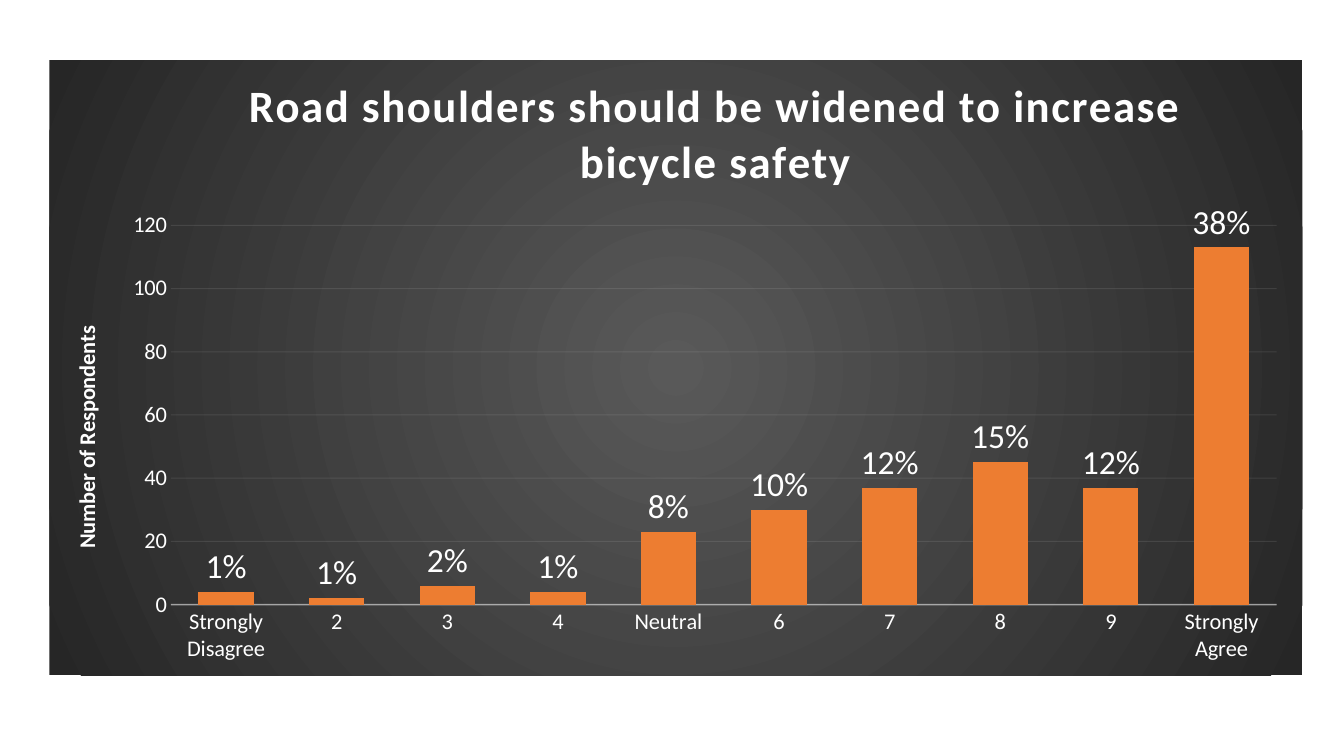
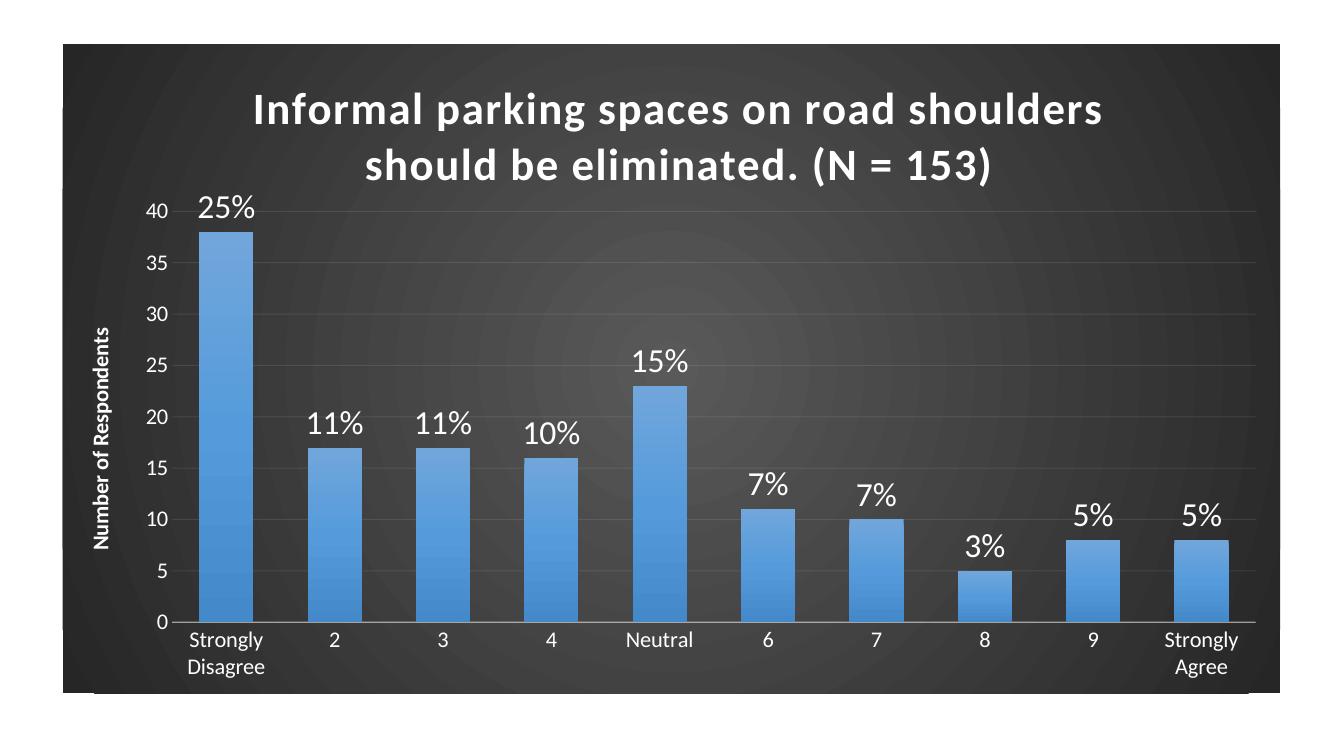
from lxml import etree
from pptx import Presentation
from pptx.chart.data import CategoryChartData
from pptx.dml.color import RGBColor
from pptx.enum import chart as ch
from pptx.oxml import parse_xml
from pptx.oxml.ns import nsdecls, qn
from pptx.util import Pt

WHITE = RGBColor(0xFF, 0xFF, 0xFF)
PALE = RGBColor(0xF2, 0xF2, 0xF2)
GRAY = RGBColor(0x59, 0x59, 0x59)
CHARCOAL = RGBColor(0x26, 0x26, 0x26)
ORANGE = RGBColor(0xED, 0x7D, 0x31)
BLUE_LIGHT = RGBColor(0x71, 0xA6, 0xDB)
BLUE_MID = RGBColor(0x55, 0x9B, 0xDB)
BLUE_DARK = RGBColor(0x44, 0x8A, 0xCA)

FONT = "Calibri"
RATINGS = ["Strongly Disagree", "2", "3", "4", "Neutral",
           "6", "7", "8", "9", "Strongly Agree"]
RADIAL = ('<a:path path="circle"><a:fillToRect l="50000" t="50000" '
          'r="50000" b="50000"/></a:path>')
VERTICAL = '<a:lin ang="5400000" scaled="0"/>'


def set_font(font, size, bold=False):
    font.name = FONT
    font.size = Pt(size)
    font.bold = bold
    font.color.rgb = WHITE


def gradient(colors, direction):
    step = 100000 // (len(colors) - 1)
    stops = "".join(f'<a:gs pos="{i * step}"><a:srgbClr val="{c}"/></a:gs>'
                    for i, c in enumerate(colors))
    return (f'<a:gradFill {nsdecls("a")} rotWithShape="1">'
            f'<a:gsLst>{stops}</a:gsLst>{direction}</a:gradFill>')


def style_line(line, owner, line_query, width, opacity):
    line.color.rgb = PALE
    line.width = Pt(width)
    color = owner.xpath(line_query + "//a:srgbClr")[0]
    etree.SubElement(color, qn("a:alpha")).set("val", str(opacity * 1000))


def place(element, index, frame, left, top, width=None, height=None):
    for old in element.xpath("c:layout"):
        element.remove(old)
    x, y, w, h = frame
    values = {"x": (left - x) / w, "y": (top - y) / h}
    if width:
        values.update(w=width / w, h=height / h)
    target = '<c:layoutTarget val="inner"/>' if width else ""
    modes = '<c:xMode val="edge"/><c:yMode val="edge"/>'
    sizes = "".join(f'<c:{k} val="{v:.4f}"/>' for k, v in values.items())
    element.insert(index, parse_xml(
        f'<c:layout {nsdecls("c")}><c:manualLayout>{target}{modes}{sizes}'
        '</c:manualLayout></c:layout>'))


def add_background(chart):
    text_props = chart._chartSpace.xpath("c:txPr")[0]
    text_props.addprevious(parse_xml(
        f'<c:spPr {nsdecls("c", "a")}>{gradient([GRAY, CHARCOAL], RADIAL)}'
        '<a:ln><a:noFill/></a:ln></c:spPr>'))


def add_title(chart, title, frame, position):
    chart.has_title = True
    p = chart.chart_title.text_frame.paragraphs[0]
    p.text = title
    set_font(p.font, 32, True)
    element = chart.chart_title._element
    element.xpath(".//a:defRPr")[0].set("spc", "100")
    place(element, 1, frame, *position)


def style_axes(chart, maximum, unit):
    cat, val = chart.category_axis, chart.value_axis
    for axis in (cat, val):
        axis.major_tick_mark = axis.minor_tick_mark = ch.XL_TICK_MARK.NONE
        set_font(axis.tick_labels.font, 16)
    style_line(cat.format.line, cat._element, "c:spPr/a:ln", 1, 54)
    val.minimum_scale, val.maximum_scale, val.major_unit = 0, maximum, unit
    val.format.line.fill.background()
    val.has_major_gridlines = True
    style_line(val.major_gridlines.format.line, val._element,
               "c:majorGridlines", 0.75, 10)
    p = val.axis_title.text_frame.paragraphs[0]
    p.text = "Number of Respondents"
    set_font(p.font, 16, True)


def fill_bars(series, colors):
    series.format.fill.solid()
    series.format.fill.fore_color.rgb = colors[0]
    if len(colors) > 1:
        solid = series._element.xpath("c:spPr/a:solidFill")[0]
        solid.getparent().replace(solid, parse_xml(gradient(colors, VERTICAL)))


def label_shares(series, counts):
    labels = series.data_labels
    labels.show_value = True
    labels.position = ch.XL_LABEL_POSITION.OUTSIDE_END
    set_font(labels.font, 24)
    for i, count in enumerate(counts):
        label = series.points[i].data_label
        r = label.text_frame.paragraphs[0].add_run()
        r.text = f"{count / sum(counts):.0%}"
        set_font(r.font, 24)
        label.position = ch.XL_LABEL_POSITION.OUTSIDE_END


def add_survey_slide(prs, title, counts, colors, frame, title_at, plot_box,
                     maximum, unit):
    slide = prs.slides.add_slide(prs.slide_layouts[6])
    data = CategoryChartData()
    data.categories = RATINGS
    data.add_series("Series 1", counts)
    chart = slide.shapes.add_chart(ch.XL_CHART_TYPE.COLUMN_CLUSTERED,
                                   *map(Pt, frame), data).chart
    chart.has_legend = False
    set_font(chart.font, 10)
    add_background(chart)
    add_title(chart, title, frame, title_at)
    style_axes(chart, maximum, unit)
    plot = chart.plots[0]
    plot.gap_width, plot.overlap = 100, -24
    plot.vary_by_categories = False
    fill_bars(plot.series[0], colors)
    label_shares(plot.series[0], counts)
    place(chart._chartSpace.xpath("c:chart/c:plotArea")[0], 0, frame, *plot_box)


def main():
    prs = Presentation()
    prs.slide_width, prs.slide_height = Pt(960), Pt(540)
    add_survey_slide(
        prs, "Road shoulders should be widened to increase bicycle safety",
        [4, 2, 6, 4, 23, 30, 37, 45, 37, 113], [ORANGE],
        frame=(35.3, 43.2, 895, 439.2), title_at=(172, 47),
        plot_box=(122, 161, 790, 271), maximum=120, unit=20)
    add_survey_slide(
        prs, "Informal parking spaces on road shoulders should be eliminated. "
        "(N = 153)",
        [38, 17, 17, 16, 23, 11, 10, 5, 8, 8],
        [BLUE_LIGHT, BLUE_MID, BLUE_DARK],
        frame=(44.8, 31.7, 869.6, 463.7), title_at=(175, 48.5),
        plot_box=(123, 151, 774, 293.5), maximum=40, unit=5)
    prs.save("out.pptx")


if __name__ == "__main__":
    main()
